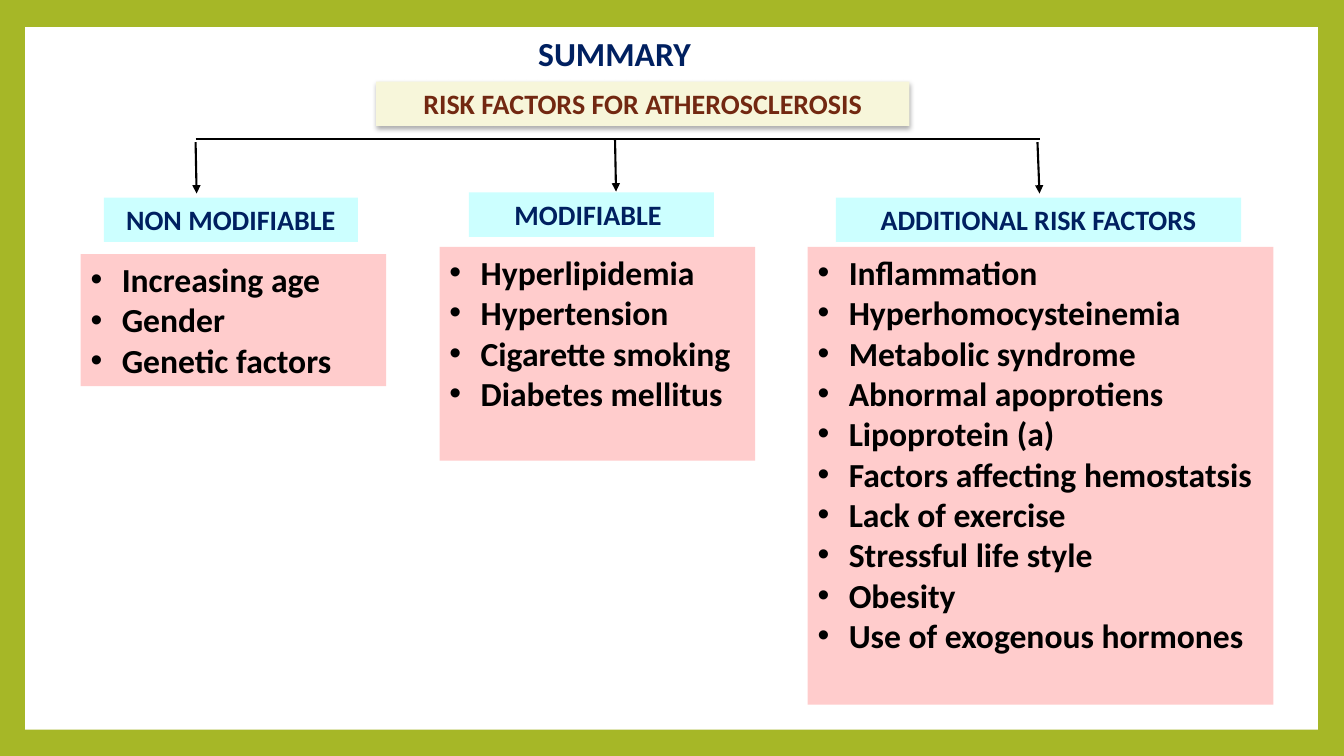
from dataclasses import dataclass

from lxml.etree import SubElement
from pptx import Presentation
from pptx.dml.color import RGBColor
from pptx.enum.shapes import MSO_CONNECTOR, MSO_SHAPE
from pptx.enum.text import MSO_ANCHOR, PP_ALIGN
from pptx.oxml.ns import qn
from pptx.shapes.autoshape import Shape
from pptx.shapes.connector import Connector
from pptx.slide import Slide
from pptx.util import Inches, Pt

LIME = RGBColor(0xA6, 0xB7, 0x27)
WHITE = RGBColor(0xFF, 0xFF, 0xFF)
CREAM = RGBColor(0xF7, 0xF6, 0xDA)
BROWN = RGBColor(0x72, 0x28, 0x11)
AQUA = RGBColor(0xCC, 0xFF, 0xFF)
NAVY = RGBColor(0x00, 0x20, 0x60)
PINK = RGBColor(0xFF, 0xCC, 0xCC)
BLACK = RGBColor(0x00, 0x00, 0x00)

FONT = "Calibri"
HEAD_HEIGHT = 0.44


@dataclass(frozen=True)
class Box:
    left: float
    top: float
    width: float
    height: float


@dataclass(frozen=True)
class Group:
    title: str
    head: Box
    body: Box
    items: tuple[str, ...]
    start: tuple[float, float]
    end: tuple[float, float]


GROUPS = (
    Group(
        "NON MODIFIABLE",
        Box(1.03, 1.96, 2.52, HEAD_HEIGHT),
        Box(0.8, 2.52, 3.03, 1.31),
        ("Increasing age", "Gender", "Genetic factors"),
        (1.94, 1.41),
        (1.95, 1.92),
    ),
    Group(
        "MODIFIABLE ",
        Box(4.65, 1.91, 2.43, HEAD_HEIGHT),
        Box(4.36, 2.45, 3.13, 2.12),
        ("Hyperlipidemia", "Hypertension", "Cigarette smoking", "Diabetes mellitus"),
        (6.1, 1.39),
        (6.11, 1.9),
    ),
    Group(
        "ADDITIONAL RISK FACTORS",
        Box(8.29, 1.96, 4.02, HEAD_HEIGHT),
        Box(8.01, 2.45, 4.62, 4.54),
        (
            "Inflammation",
            "Hyperhomocysteinemia",
            "Metabolic syndrome",
            "Abnormal apoprotiens",
            "Lipoprotein (a)",
            "Factors affecting hemostatsis",
            "Lack of exercise",
            "Stressful life style",
            "Obesity",
            "Use of exogenous hormones",
        ),
        (10.29, 1.41),
        (10.31, 1.92),
    ),
)


def add_panel(slide: Slide, box: Box, fill: RGBColor) -> Shape:
    panel = slide.shapes.add_shape(
        MSO_SHAPE.RECTANGLE,
        Inches(box.left), Inches(box.top), Inches(box.width), Inches(box.height),
    )
    panel.shadow.inherit = False
    panel.fill.solid()
    panel.fill.fore_color.rgb = fill
    panel.line.fill.background()
    return panel


def add_text(
    shape: Shape, lines: tuple[str, ...], size: int, color: RGBColor, list_style: bool = False
) -> None:
    frame = shape.text_frame
    frame.word_wrap = True
    frame.vertical_anchor = MSO_ANCHOR.TOP
    for index, line in enumerate(lines):
        para = frame.add_paragraph() if index else frame.paragraphs[0]
        para.alignment = PP_ALIGN.LEFT if list_style else PP_ALIGN.CENTER
        if list_style:
            props = para._p.get_or_add_pPr()
            props.set("marL", str(Inches(0.31)))
            props.set("indent", str(Inches(-0.31)))
            SubElement(props, qn("a:buFont"), typeface="Arial")
            SubElement(props, qn("a:buChar"), char="•")
        run = para.add_run()
        run.text = line
        run.font.name = FONT
        run.font.size = Pt(size)
        run.font.bold = True
        run.font.color.rgb = color


def add_shadow(shape: Shape) -> None:
    effects = shape._element.spPr.find(qn("a:effectLst"))
    shadow = SubElement(
        effects, qn("a:outerShdw"),
        blurRad=str(Pt(3.5)), dist=str(Pt(2.2)), dir="5400000", rotWithShape="0",
    )
    color = SubElement(shadow, qn("a:srgbClr"), val=str(BLACK))
    SubElement(color, qn("a:alpha"), val="32000")


def add_line(slide: Slide, start: tuple[float, float], end: tuple[float, float]) -> Connector:
    line = slide.shapes.add_connector(
        MSO_CONNECTOR.STRAIGHT, *(Inches(value) for value in start + end)
    )
    line.line.color.rgb = BLACK
    line.line.width = Pt(1.5)
    SubElement(line._element.spPr, qn("a:effectLst"))
    return line


def add_arrow(slide: Slide, start: tuple[float, float], end: tuple[float, float]) -> None:
    arrow = add_line(slide, start, end)
    SubElement(arrow.line._get_or_add_ln(), qn("a:tailEnd"), type="triangle")


def main() -> None:
    deck = Presentation()
    deck.slide_width = Inches(13.33)
    deck.slide_height = Inches(7.5)
    slide = deck.slides.add_slide(deck.slide_layouts[6])
    slide.background.fill.solid()
    slide.background.fill.fore_color.rgb = LIME

    add_panel(slide, Box(0.25, 0.27, 12.82, 6.97), WHITE)
    banner = add_panel(slide, Box(3.73, 0.81, 5.29, HEAD_HEIGHT), CREAM)
    add_shadow(banner)
    add_text(banner, ("RISK FACTORS FOR ATHEROSCLEROSIS",), 20, BROWN)

    add_line(slide, (1.94, 1.38), (10.32, 1.38))
    for group in GROUPS:
        add_text(add_panel(slide, group.head, AQUA), (group.title,), 20, NAVY)
        add_text(add_panel(slide, group.body, PINK), group.items, 24, BLACK, True)
        add_arrow(slide, group.start, group.end)

    title = slide.shapes.add_textbox(Inches(4.53), Inches(0.28), Inches(3.13), Inches(0.5))
    add_text(title, ("SUMMARY",), 24, NAVY)
    deck.save("out.pptx")


if __name__ == "__main__":
    main()
